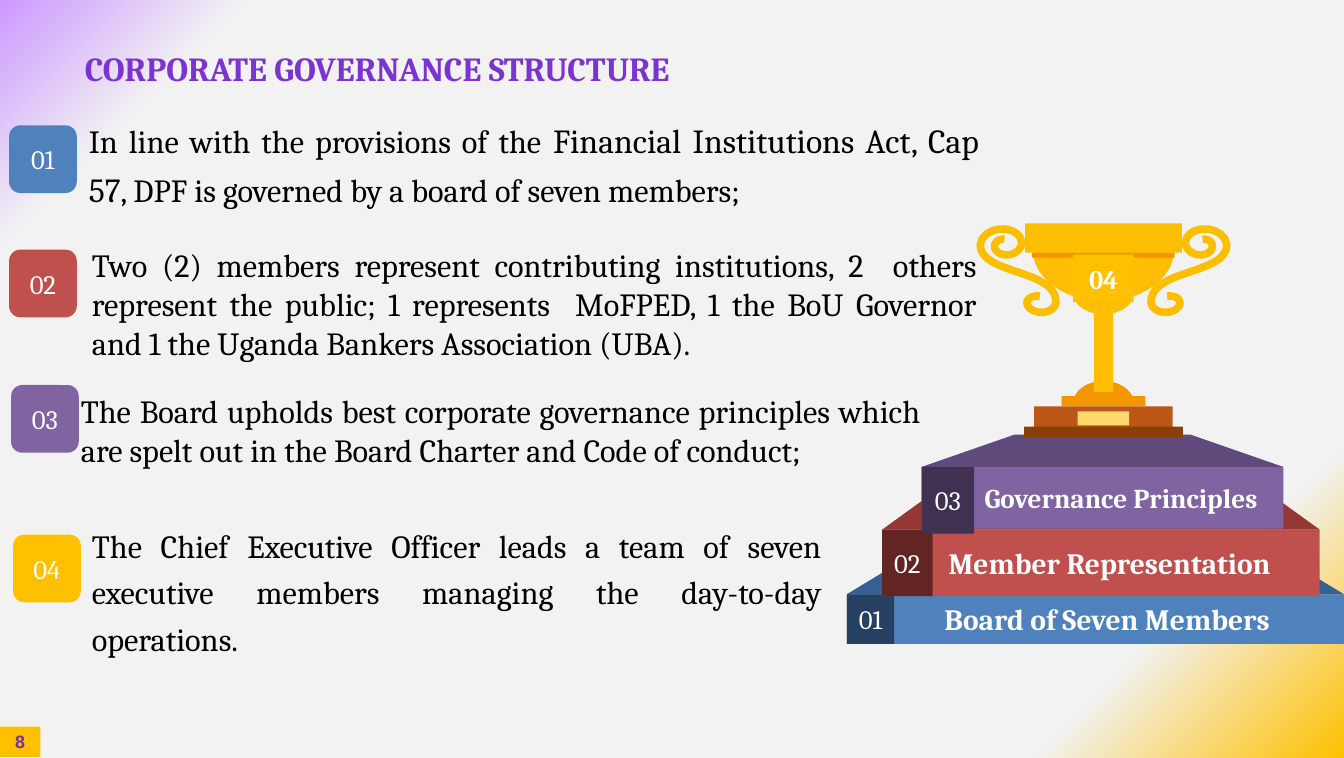
"""Builds the corporate governance slide with a trophy on three tiers."""
import itertools
import math

import lxml.etree
import pptx
import pptx.dml.color
import pptx.enum.shapes
import pptx.enum.text
import pptx.oxml.ns
import pptx.util


class Theme:
    font, plain = "Cambria", "Arial"
    head, body, large, label, small, tag, page = 24, 23, 24, 21, 19.4, 19, 12.7
    white, black, title, num = "FFFFFF", "000000", "7B34D2", "7030A0"
    blue, red, plum, gold = "4F81BD", "C0504D", "8064A2", "FFC000"
    navy, wine, grape = "376092", "953735", "604A7B"
    ink, brick, night = "254061", "632523", "403152"
    rim, cup, amber = "FCBE00", "FFBE03", "F49600"
    base, foot, plate = "BB5616", "8B3E05", "FFD96B"
    back = (0, "CC99FF"), (12, "F2F2F2"), (85, "F2F2F2"), (100, "FFC000")


CELL = pptx.util.Inches(0.1)
COLS, ROWS = 133, 75
ALIGN = pptx.enum.text.PP_ALIGN
ANCHOR = pptx.enum.text.MSO_ANCHOR
FORM = pptx.enum.shapes.MSO_SHAPE
RGB = pptx.dml.color.RGBColor.from_string
QN = pptx.oxml.ns.qn

deck = pptx.Presentation()
deck.slide_width, deck.slide_height = COLS * CELL, ROWS * CELL
slide = deck.slides.add_slide(deck.slide_layouts[5])
shapes = slide.shapes


def write(shape, text, size=(Theme.tag,), color=Theme.white, font=Theme.font,
          bold=False, align=ALIGN.CENTER, anchor=ANCHOR.MIDDLE,
          pad=(0, 0, 0, 0), lines=None):
    frame = shape.text_frame
    frame.word_wrap, frame.vertical_anchor = True, anchor
    (frame.margin_left, frame.margin_top,
     frame.margin_right, frame.margin_bottom) = [round(p * CELL) for p in pad]
    para = frame.paragraphs[0]
    para.alignment, para.line_spacing = align, lines
    for part, points in zip(text.split("|"), itertools.cycle(size)):
        run = para.add_run()
        run.text = part
        run.font.name, run.font.bold = font, bold
        run.font.size = pptx.util.Pt(points)
        run.font.color.rgb = RGB(color)


def draw(color, box=None, form=FORM.RECTANGLE, dots=None, stroke=0):
    if dots:
        dots = [(x * CELL, y * CELL) for x, y in dots]
        pen = shapes.build_freeform(*dots[0])
        pen.add_line_segments(dots[1:], close=not stroke)
        shape = pen.convert_to_shape()
    else:
        shape = shapes.add_shape(form, *[round(b * CELL) for b in box])
    shape.shadow.inherit = False
    paint, blank = shape.fill, shape.line.fill
    if stroke:
        paint, blank = blank, paint
        shape.line.width = round(stroke * CELL)
    paint.solid()
    paint.fore_color.rgb = RGB(color)
    blank.background()
    return shape


fill = slide.background.fill
fill.gradient()
grad = slide.background._cSld.find(".//" + QN("a:gradFill"))
stops = grad.find(QN("a:gsLst"))
for old in list(stops):
    stops.remove(old)
for share, color in Theme.back:
    stop = lxml.etree.SubElement(stops, QN("a:gs"), pos=str(share * 1000))
    lxml.etree.SubElement(stop, QN("a:srgbClr"), val=color)
slant = grad.find(QN("a:lin"))
slant.set("ang", str(45 * 60000))
slant.set("scaled", "0")

title = shapes.title
title.left, title.top, title.width, title.height = [
    round(b * CELL) for b in (7.2, 2.5, 119.7, 8.4)]
write(title, "CORPORATE GOVERNANCE STRUCTURE", (Theme.head,), Theme.title,
      bold=True, align=ALIGN.LEFT, pad=(1.2, 0.6, 1.2, 0.6))

BADGE = 6.7
points = [
    (Theme.blue, 0.9, 12.4, (8.8, 11.1, 88.1, 11.3), 1.2,
     "In line with the provisions of the |Financial Institutions Act, Cap 57|"
     ", DPF is governed by a board of seven members;"),
    (Theme.red, 0.9, 24.7, (9.1, 24.3, 87.7, 11.7), None,
     "Two (2) members represent contributing institutions, 2  others represent "
     "the public; 1 represents  MoFPED, 1 the BoU Governor and 1 the Uganda "
     "Bankers Association (UBA)."),
    (Theme.plum, 1.1, 38.1, (8, 38.7, 83.2, 11.5), None,
     "The Board upholds best corporate governance principles which are spelt "
     "out in the Board Charter and Code of conduct;"),
    (Theme.gold, 1.3, 52.9, (9.1, 51.3, 72.3, 14.4), 1.2,
     "The Chief Executive Officer leads a team of seven executive members "
     "managing the day-to-day operations."),
]
for rank, (color, left, top, box, lines, text) in enumerate(points, 1):
    badge = draw(color, (left, top, BADGE, BADGE), FORM.ROUNDED_RECTANGLE)
    write(badge, f"{rank:02}")
    area = shapes.add_textbox(*[round(b * CELL) for b in box])
    write(area, text, (Theme.body, Theme.large), Theme.black,
          align=ALIGN.JUSTIFY, anchor=ANCHOR.TOP, lines=lines)

MID = 109.2
tiers = [
    (Theme.blue, Theme.navy, Theme.ink, (83.8, 58.8, 49.2, 4.9),
     5.1, 8.4, (4.7, 4.9), "Board of Seven Members", Theme.label, 2.4),
    (Theme.red, Theme.wine, Theme.brick, (87.3, 52.4, 43.3, 6.6),
     6.5, 9, (5, 6.6), "Member Representation", Theme.label, 3.3),
    (Theme.plum, Theme.grape, Theme.night, (91.2, 46.2, 35.8, 6.1),
     3.2, 9.2, (5.2, 6.6), "Governance Principles", Theme.small, 1.5),
]
for rank, tier in enumerate(tiers, 1):
    front, roof, dark, face, rise, slope, tag, text, size, lean = tier
    left, top, wide, high = face
    right = left + wide
    write(draw(front, face), text, (size,), bold=True, pad=(tag[0], 0, lean, 0))
    draw(roof, dots=[(left, top), (left + slope, top - rise),
                     (right - slope, top - rise), (right, top)])
    write(draw(dark, (left, top, *tag)), f"{rank:02}")

STEPS = 24
shares = [k / STEPS for k in range(STEPS + 1)]
curl, arm, hook = [], [], []
for t in shares:
    turn = -math.pi * (0.5 + 2.5 * t)
    curl.append((99.4 + (0.6 + 1.8 * t) * math.cos(turn),
                 24.2 + (0.5 + 1.3 * t) * math.sin(turn)))
    turn = math.pi * 1.5 * t
    hook.append((102.9 + (1.6 - 0.5 * t) * math.cos(turn),
                 29.9 + (1.2 - 0.6 * t) * math.sin(turn)))
start, end = curl[-1], hook[0]
pulls = start, (start[0], start[1] + 3), (end[0], end[1] - 3.3), end
for t in shares:
    weights = [math.comb(3, k) * t**k * (1 - t)**(3 - k) for k in range(4)]
    arm.append([sum(w * p[axis] for w, p in zip(weights, pulls))
                for axis in (0, 1)])
handle = curl + arm[1:-1] + hook
for side in (1, -1):
    draw(Theme.rim, dots=[(MID + side * (x - MID), y) for x, y in handle],
         stroke=0.75)

stem = (Theme.cup, 30.6, 1.9, 8.2)
neck = (Theme.cup, 29, 3, 2.1)
bowl = (Theme.cup, 24.7, 7, 5.1)
dome = (Theme.amber, 39.9, 3, -2.2)
for color, y, wide, deep in (neck, bowl, dome):
    draw(color, dots=[(MID + wide * math.cos(math.pi * t),
                       y + deep * math.sin(math.pi * t)) for t in shares])

step = (Theme.amber, 39.2, 8.3, 1)
band = (Theme.amber, 25, 14.1, 0.5)
rim = (Theme.rim, 22.1, 15.5, 2.9)
base = (Theme.base, 40.2, 13.7, 2.4)
foot = (Theme.foot, 42.2, 15.7, 1.1)
plate = (Theme.plate, 40.7, 5.1, 1.4)
label = (Theme.gold, 25.2, 6, 4.7)
for color, y, wide, high in (stem, step, band, rim, base, foot, plate, label):
    part = draw(color, (MID - wide / 2, y, wide, high))
write(part, "04", bold=True)

write(draw(Theme.gold, (0, 71.9, 4, 3)), "8", (Theme.page,), Theme.num,
      Theme.plain, bold=True)

deck.save("out.pptx")
